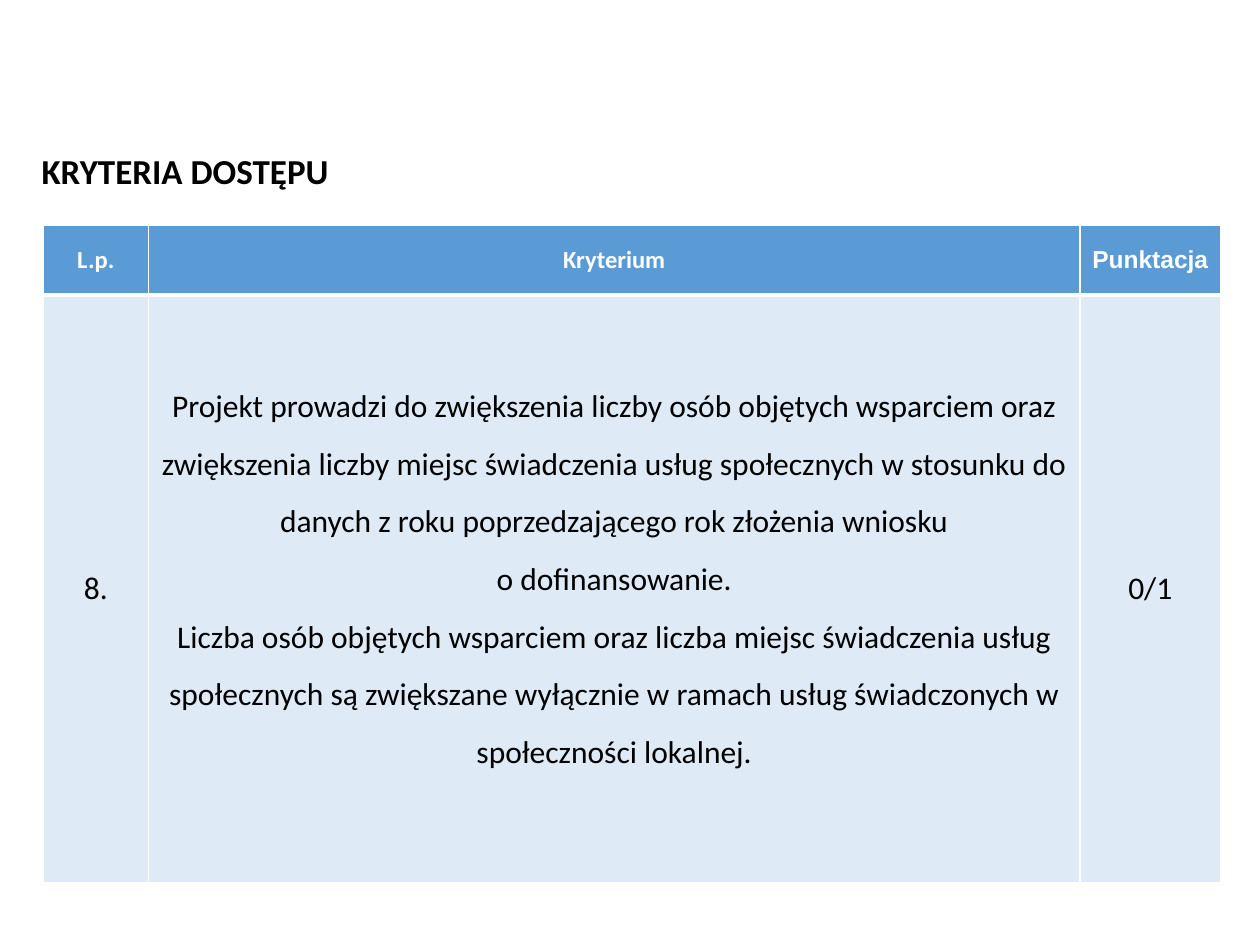
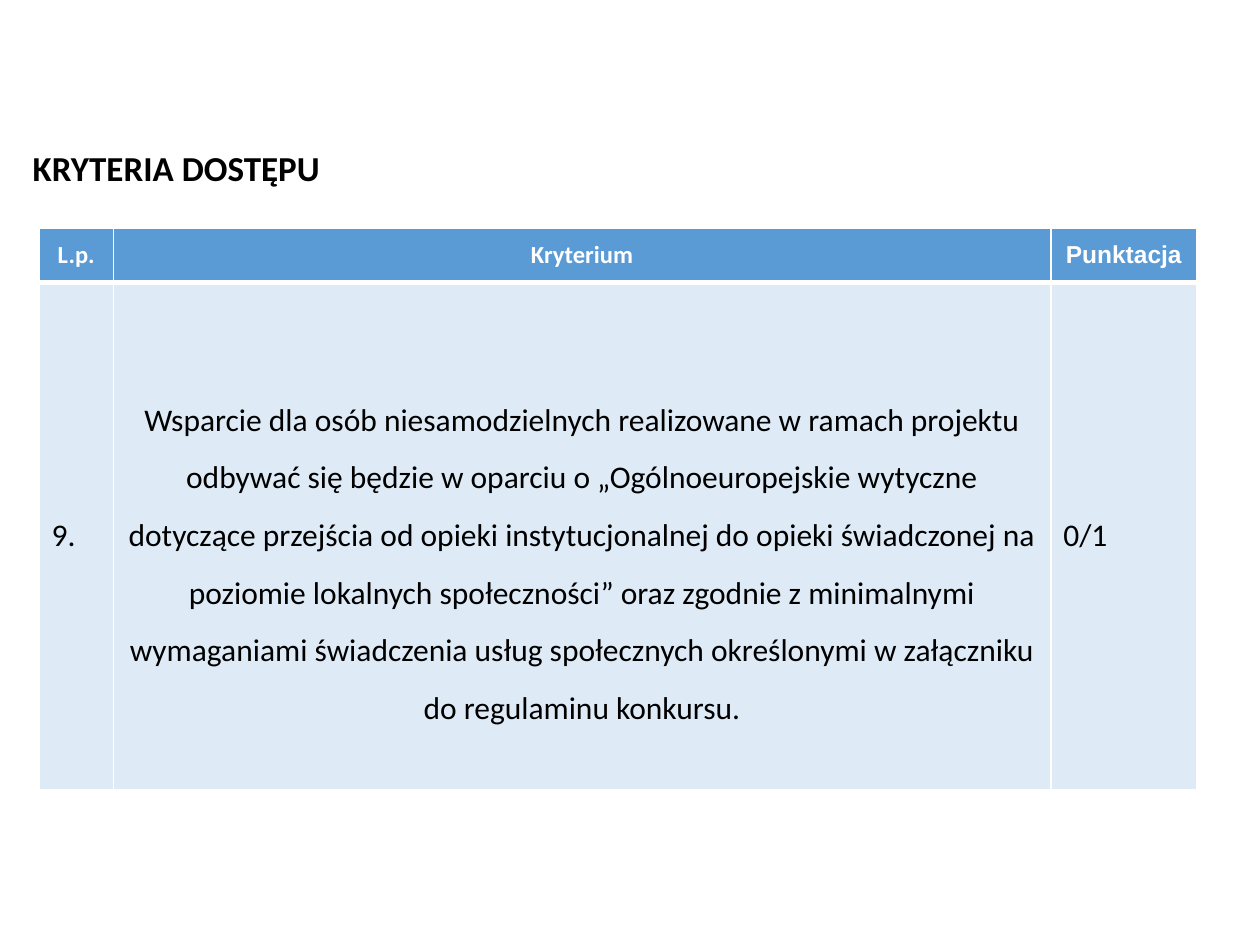
from dataclasses import dataclass

from lxml import etree
from pptx import Presentation
from pptx.dml.color import RGBColor
from pptx.enum.text import MSO_ANCHOR, MSO_AUTO_SIZE, PP_ALIGN
from pptx.oxml.ns import qn
from pptx.util import Inches, Pt

LEFT, CENTER = PP_ALIGN.LEFT, PP_ALIGN.CENTER
MIDDLE = MSO_ANCHOR.MIDDLE
GROW = MSO_AUTO_SIZE.SHAPE_TO_FIT_TEXT

TITLE_ONLY = 5
BLACK, WHITE = "000000", "FFFFFF"
HEADER_FILL, BODY_FILL = "5B9BD5", "DEEBF7"
THIN, THICK = 1, 3
HEADER_MARGIN = 0.05
HEADERS = (("L.p.", "Calibri"), ("Kryterium", "Calibri"), ("Punktacja", "Arial"))
SCORE = "0/1"


@dataclass
class Criterion:
    number: str
    paragraphs: list[str]
    title_box: tuple[float, float, float, float]
    table_at: tuple[float, float]
    cols: tuple[float, float, float]
    rows: tuple[float, float]
    side_align: PP_ALIGN
    margin_top: float = 0.05
    margin_bottom: float = 0.05


CRITERIA = [
    Criterion(
        "8.",
        ["Projekt prowadzi do zwiększenia liczby osób objętych wsparciem oraz "
         "zwiększenia liczby miejsc świadczenia usług społecznych w stosunku do "
         "danych z roku poprzedzającego rok złożenia wniosku\n"
         "o dofinansowanie.",
         "Liczba osób objętych wsparciem oraz liczba miejsc świadczenia usług "
         "społecznych są zwiększane wyłącznie w ramach usług świadczonych w "
         "społeczności lokalnej."],
        (0.23, 1.13, 2.54, 0.44), (0.34, 1.79), (0.84, 7.39, 1.12), (0.55, 4.67),
        CENTER, margin_bottom=0.35),
    Criterion(
        "9.",
        ["Wsparcie dla osób niesamodzielnych realizowane w ramach projektu "
         "odbywać się będzie w oparciu o „Ogólnoeuropejskie wytyczne dotyczące "
         "przejścia od opieki instytucjonalnej do opieki świadczonej na poziomie "
         "lokalnych społeczności” oraz zgodnie z minimalnymi wymaganiami "
         "świadczenia usług społecznych określonymi w załączniku do regulaminu "
         "konkursu."],
        (0.16, 1.11, 2.59, 0.44), (0.31, 1.81), (0.59, 7.44, 1.16), (0.43, 4.03),
        LEFT, margin_top=0.35),
]


def rgb(color: str) -> RGBColor:
    return RGBColor.from_string(color)


def write(tf, paragraphs: list[str], *, size: float = 18, font: str = "Calibri",
          color: str = BLACK, bold: bool = False, align: PP_ALIGN = CENTER,
          spacing: float = 1.0) -> None:
    """Fill a text frame; a newline inside a paragraph is a line break."""
    for i, text in enumerate(paragraphs):
        p = tf.add_paragraph() if i else tf.paragraphs[0]
        p.alignment, p.line_spacing = align, spacing
        for j, line in enumerate(text.split("\n")):
            if j:
                p.add_line_break()
            r = p.add_run()
            r.text = line
            r.font.name, r.font.size, r.font.bold = font, Pt(size), bold
            r.font.color.rgb = rgb(color)


def style_cell(cell, fill: str, top: float, bottom: float) -> None:
    """Set white borders, the fill and the vertical anchor."""
    tcPr = cell._tc.get_or_add_tcPr()
    for side, width in (("L", THIN), ("R", THIN), ("T", top), ("B", bottom)):
        ln = etree.SubElement(tcPr, qn(f"a:ln{side}"), w=str(Pt(width)))
        solid = etree.SubElement(ln, qn("a:solidFill"))
        etree.SubElement(solid, qn("a:srgbClr"), val=WHITE)
    cell.fill.solid()
    cell.fill.fore_color.rgb = rgb(fill)
    cell.vertical_anchor = MIDDLE


def add_title(s, box: tuple[float, float, float, float]) -> None:
    sp = s.shapes.title
    sp.left, sp.top, sp.width, sp.height = map(Inches, box)
    tf = sp.text_frame
    tf.word_wrap, tf.auto_size, tf.vertical_anchor = True, GROW, MIDDLE
    write(tf, ["KRYTERIA DOSTĘPU"], size=20, bold=True, align=LEFT)


def add_criterion_table(s, c: Criterion) -> None:
    x, y = c.table_at
    table = s.shapes.add_table(2, 3, Inches(x), Inches(y), Inches(sum(c.cols)),
                               Inches(sum(c.rows))).table
    table.horz_banding = False
    for col, width in zip(table.columns, c.cols):
        col.width = Inches(width)
    for row, height in zip(table.rows, c.rows):
        row.height = Inches(height)

    # Header row, with narrow side margins so each heading stays on one line
    for cell, (text, font) in zip(table.rows[0].cells, HEADERS):
        style_cell(cell, HEADER_FILL, THIN, THICK)
        cell.margin_left = cell.margin_right = Inches(HEADER_MARGIN)
        write(cell.text_frame, [text], size=14, font=font, color=WHITE, bold=True)

    # Criterion row
    number, description, score = table.rows[1].cells
    for cell in (number, description, score):
        style_cell(cell, BODY_FILL, THICK, THIN)
    write(number.text_frame, [c.number], align=c.side_align)
    write(description.text_frame, c.paragraphs, spacing=1.5)
    write(score.text_frame, [SCORE], align=c.side_align)
    description.margin_top = Inches(c.margin_top)
    description.margin_bottom = Inches(c.margin_bottom)


def main() -> None:
    prs = Presentation()
    prs.slide_width, prs.slide_height = Inches(10), Inches(7.5)
    for c in CRITERIA:
        s = prs.slides.add_slide(prs.slide_layouts[TITLE_ONLY])
        add_criterion_table(s, c)
        add_title(s, c.title_box)
    prs.save("out.pptx")


if __name__ == "__main__":
    main()
